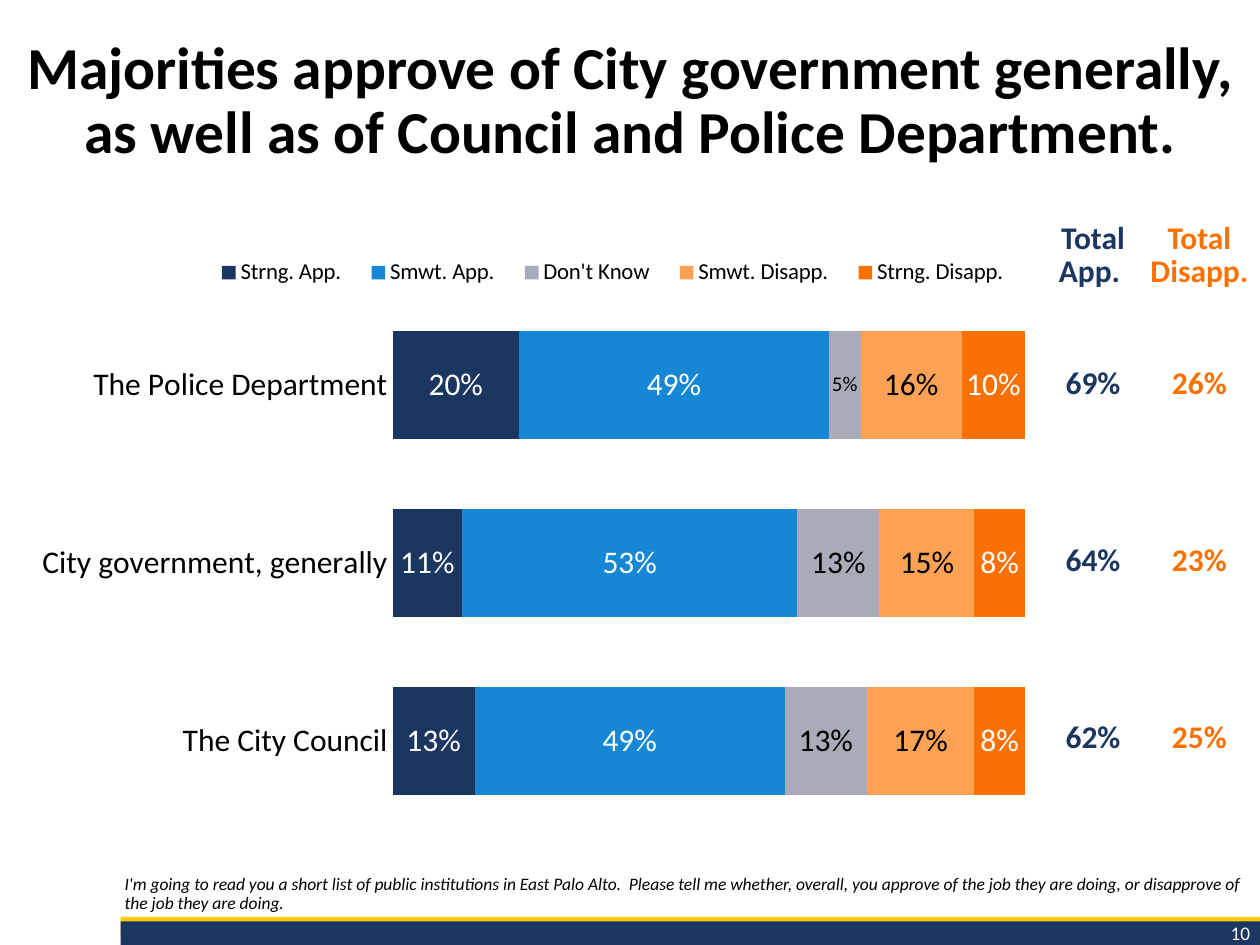
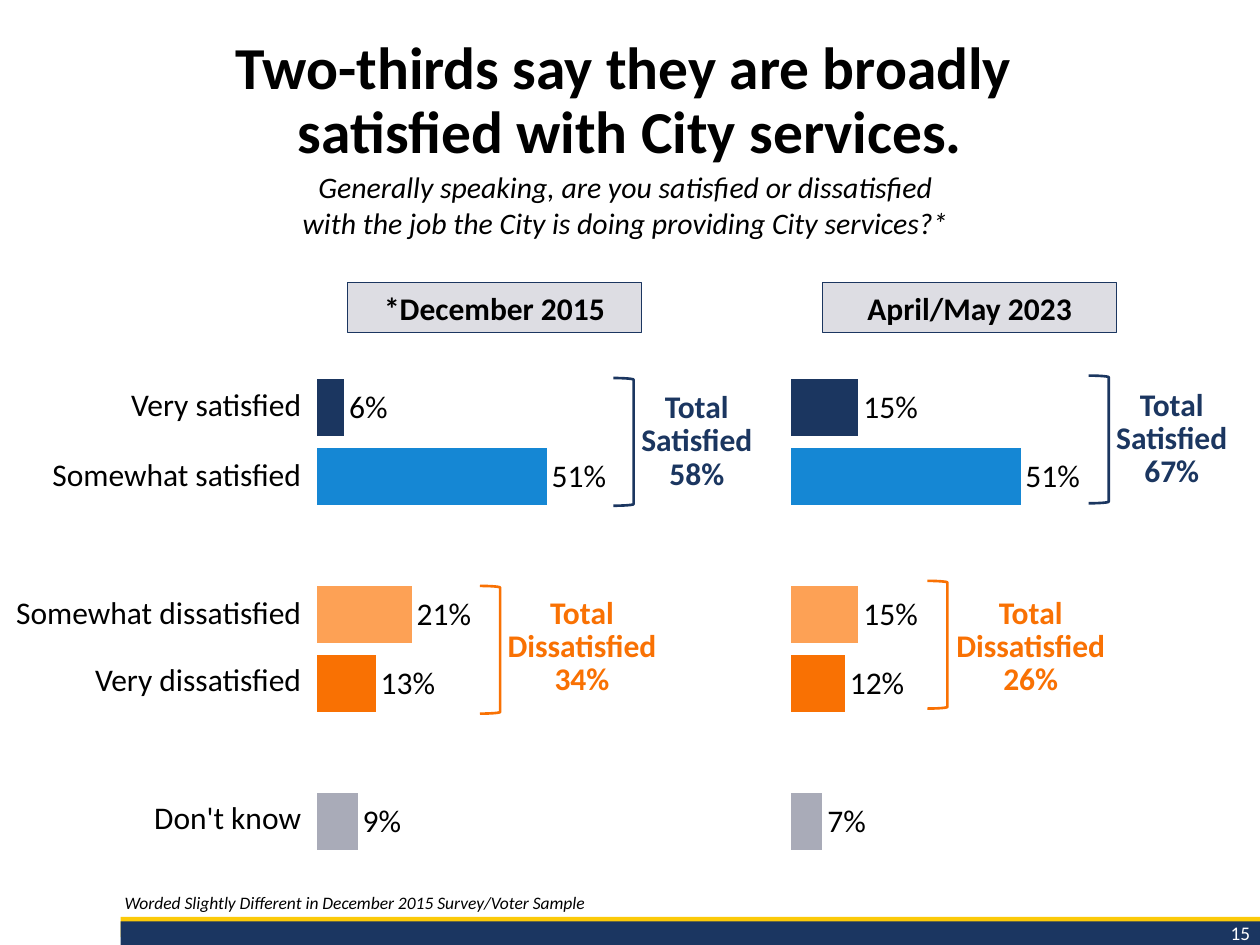
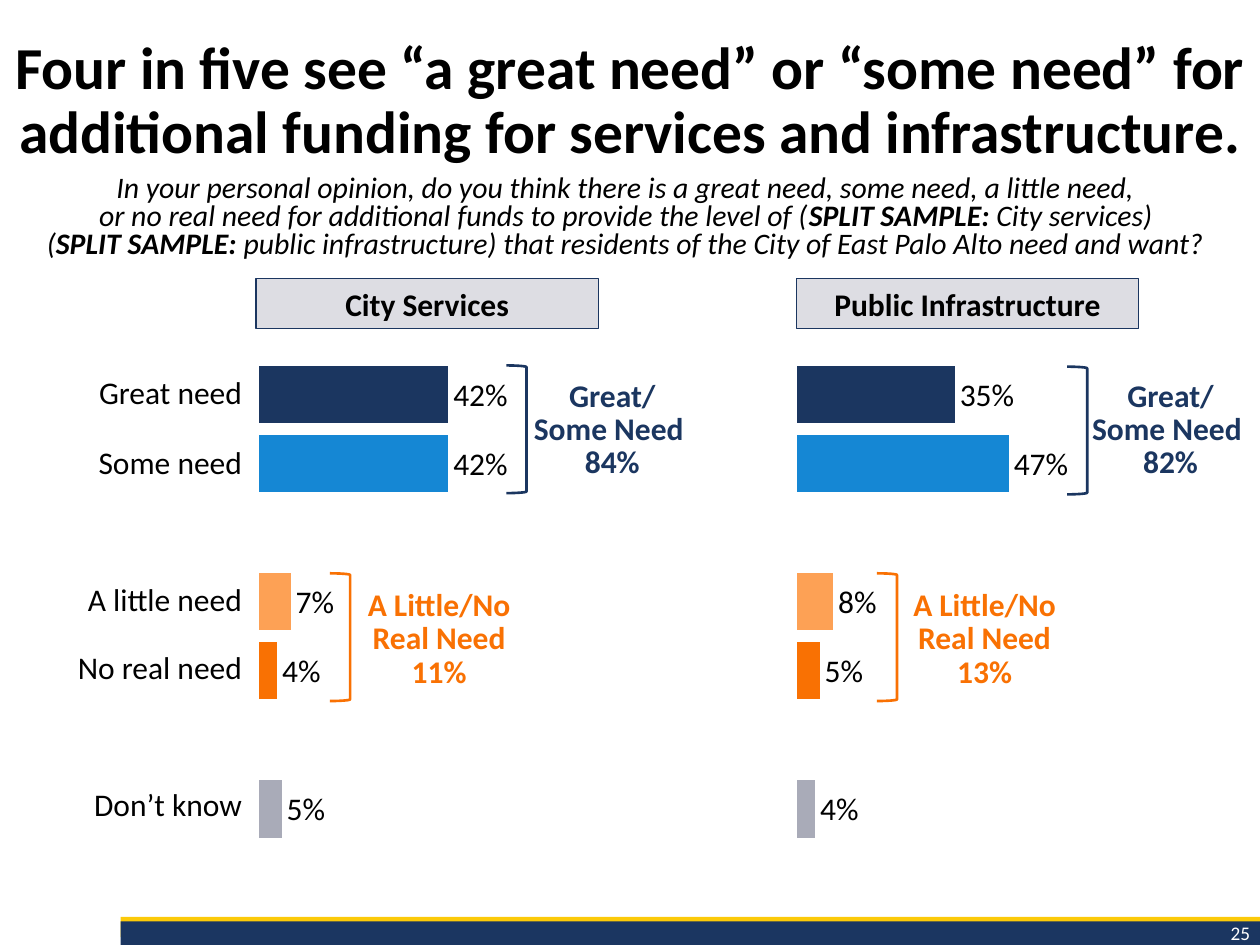
"""Build three survey slides with bar charts, brackets and totals."""
from pptx import Presentation
from pptx.chart.data import CategoryChartData
from pptx.dml.color import RGBColor
from pptx.enum.chart import (XL_CHART_TYPE, XL_LABEL_POSITION,
                             XL_LEGEND_POSITION, XL_TICK_LABEL_POSITION,
                             XL_TICK_MARK)
from pptx.enum.shapes import MSO_SHAPE
from pptx.enum.text import MSO_ANCHOR, MSO_AUTO_SIZE, PP_ALIGN
from pptx.oxml import parse_xml
from pptx.oxml.ns import nsdecls
from pptx.util import Pt

FONT = "Calibri"
BLACK = RGBColor(0x00, 0x00, 0x00)
WHITE = RGBColor(0xFF, 0xFF, 0xFF)
NAVY = RGBColor(0x1B, 0x36, 0x60)
BLUE = RGBColor(0x15, 0x87, 0xD4)
GRAY = RGBColor(0xA9, 0xAB, 0xB8)
PEACH = RGBColor(0xFD, 0xA1, 0x55)
ORANGE = RGBColor(0xF9, 0x71, 0x03)
GOLD = RGBColor(0xFC, 0xCA, 0x09)
PALE = RGBColor(0xDD, 0xDD, 0xE3)
BAND = RGBColor(0x1B, 0x36, 0x61)


def write(frame, text, size, ink=BLACK, bold=False, slant=False,
          side=PP_ALIGN.CENTER, pitch=None):
    """Fill a frame; text between bars is bold."""
    frame.word_wrap = True
    para = frame.paragraphs[0]
    para.alignment = side
    para.space_before = Pt(0)
    if pitch:
        para.line_spacing = pitch
    for row, line in enumerate(text.split("\n")):
        if row:
            para.add_line_break()
        for col, part in enumerate(line.split("|")):
            run = para.add_run()
            run.text = part
            font = run.font
            font.name, font.size = FONT, Pt(size)
            font.bold, font.italic = bold or col % 2 == 1, slant
            font.color.rgb = ink


def draw(slide, kind, cats, series, box, inner, top, step, gap):
    """Add a bar chart with a fixed plot area and no value axis."""
    data = CategoryChartData(number_format="0%")
    data.categories = cats
    for name, vals in series:
        data.add_series(name, vals)
    chart = slide.shapes.add_chart(kind, *map(Pt, box), data).chart
    chart.has_title = chart.has_legend = False
    chart.font.name, chart.font.size = FONT, Pt(18)
    chart.font.color.rgb = BLACK
    axis = chart.category_axis
    axis.reverse_order = True
    axis.major_tick_mark = axis.minor_tick_mark = XL_TICK_MARK.NONE
    axis.has_major_gridlines = False
    axis.format.line.fill.background()
    scale = chart.value_axis
    scale.visible = scale.has_major_gridlines = False
    scale.minimum_scale, scale.maximum_scale = 0, top
    scale.major_unit = step
    plot = chart.plots[0]
    plot.gap_width, plot.vary_by_categories = gap, False
    spots = "".join(f'<c:{tag} val="{val}"/>' for tag, val in zip("xywh", inner))
    area = chart.element.xpath("c:chart/c:plotArea")[0]
    area.insert(0, parse_xml(
        f'<c:layout {nsdecls("c")}><c:manualLayout><c:layoutTarget val="inner"/>'
        f'<c:xMode val="edge"/><c:yMode val="edge"/>{spots}'
        '</c:manualLayout></c:layout>'))
    return chart


deck = Presentation()
deck.slide_width, deck.slide_height = Pt(720), Pt(540)

pages = [
    ("Majorities approve of City government generally, as well as of Council "
     "and Police Department.", 10,
     "I'm going to read you a short list of public institutions in East Palo "
     "Alto.  Please tell me whether, overall, you approve of the job they are "
     "doing, or disapprove of the job they are doing."),
    ("Two-thirds say they are broadly \nsatisfied with City services.", 15,
     "Worded Slightly Different in December 2015 Survey/Voter Sample"),
    ("Four in five see “a great need” or “some need” for additional funding "
     "for services and infrastructure.", 25, None),
]
slides = []
for title, page, note in pages:
    slide = deck.slides.add_slide(deck.slide_layouts[1 if note else 5])
    slides.append(slide)
    for top, high, fill in ((524, 11.5, GOLD), (526.5, 13.5, BAND)):
        band = slide.shapes.add_shape(MSO_SHAPE.RECTANGLE, Pt(69), Pt(top),
                                      Pt(651), Pt(high))
        band.shadow.inherit = False
        band.fill.solid()
        band.fill.fore_color.rgb = fill
        band.line.fill.background()
    box = slide.shapes.add_textbox(Pt(615), Pt(522.7), Pt(106.5), Pt(21))
    write(box.text_frame, str(page), 11, WHITE, side=PP_ALIGN.RIGHT)
    head = slide.shapes.title
    head.left, head.top, head.width, head.height = Pt(0), Pt(14.4), Pt(720), Pt(88)
    head.text_frame.auto_size = MSO_AUTO_SIZE.NONE
    head.text_frame.vertical_anchor = MSO_ANCHOR.MIDDLE
    write(head.text_frame, title, 34, bold=True, pitch=0.9)
    if note:
        foot = slide.placeholders[1]
        foot.left, foot.top, foot.width, foot.height = (
            Pt(64), Pt(486.7), Pt(654.5), Pt(38.9))
        frame = foot.text_frame
        frame.auto_size = MSO_AUTO_SIZE.NONE
        frame.vertical_anchor = MSO_ANCHOR.BOTTOM
        props = frame.paragraphs[0]._p.get_or_add_pPr()
        props.set("marL", "0")
        props.set("indent", "0")
        props.append(parse_xml(f'<a:buNone {nsdecls("a")}/>'))
        write(frame, note, 10, slant=True, side=PP_ALIGN.LEFT, pitch=0.9)

votes = [
    ("Strng. App.", (0.20, 0.11, 0.13), NAVY, WHITE),
    ("Smwt. App.", (0.49, 0.53, 0.49), BLUE, WHITE),
    ("Don't Know", (0.05, 0.13, 0.13), GRAY, BLACK),
    ("Smwt. Disapp.", (0.16, 0.15, 0.17), PEACH, BLACK),
    ("Strng. Disapp.", (0.10, 0.08, 0.08), ORANGE, WHITE),
]
chart = draw(slides[0], XL_CHART_TYPE.BAR_STACKED_100,
             ["The Police Department", "City government, generally",
              "The City Council"],
             [vote[:2] for vote in votes], (0, 140.4, 598.3, 357.8),
             (0.375, 0.08, 0.604, 0.853), 1, 0.2, 65)
for bar, (name, vals, fill, ink) in zip(chart.plots[0].series, votes):
    bar.format.fill.solid()
    bar.format.fill.fore_color.rgb = fill
    tags = bar.data_labels
    tags.show_value, tags.position = True, XL_LABEL_POSITION.CENTER
    tags.font.size, tags.font.color.rgb = Pt(18), ink
    if name == "Don't Know":
        tag = bar.points[0].data_label
        tag.font.size, tag.position = Pt(12), XL_LABEL_POSITION.CENTER
chart.has_legend = True
chart.legend.position = XL_LEGEND_POSITION.TOP
chart.legend.include_in_layout = False
chart.legend.font.size = Pt(13)
chart.element.xpath("c:chart/c:legend/c:legendPos")[0].addnext(parse_xml(
    f'<c:layout {nsdecls("c")}><c:manualLayout><c:xMode val="edge"/>'
    '<c:yMode val="edge"/><c:x val="0.19"/><c:y val="0.015"/>'
    '<c:w val="0.79"/><c:h val="0.056"/></c:manualLayout></c:layout>'))

asks = [
    (slides[1], "Generally speaking, are you satisfied or dissatisfied \nwith the "
     "job the City is doing providing City services?* ", 92.9, None),
    (slides[2], "In your personal opinion, do you think there is a great need, "
     "some need, a little need, \nor no real need for additional funds to provide "
     "the level of (|SPLIT SAMPLE:| City services) \n(|SPLIT SAMPLE:| public "
     "infrastructure) that residents of the City of East Palo Alto need and "
     "want? ", 97.2, Pt(16)),
]
for slide, text, top, pitch in asks:
    box = slide.shapes.add_textbox(Pt(0), Pt(top), Pt(719), Pt(52))
    write(box.text_frame, text, 17, slant=True, pitch=pitch)

happy, upset = "Total Satisfied\n", "Total Dissatisfied\n"
great, small = "Great/\nSome Need \n", "A Little/No Real Need\n"
panels = [
    (slides[1], "*December 2015", (198.7, 161.3, 167.8), (165.6, 207.4),
     (0.06, 0.51, None, 0.21, 0.13, None, 0.09),
     [(350.6, 216, happy + "58%", 351.4, 220.3, 93.6, NAVY),
      (274.3, 334.8, upset + "34%", 275, 337.7, 115.2, ORANGE)]),
    (slides[1], "April/May 2023", (470.2, 161.3, 167.8), (436.3, 207.4),
     (0.15, 0.51, None, 0.15, 0.12, None, 0.07),
     [(622.1, 214.6, happy + "67%", 622.8, 218.9, 93.6, NAVY),
      (529.9, 331.9, upset + "26%", 531.4, 337.7, 115.2, ORANGE)]),
    (slides[2], "City Services", (146.2, 159.1, 195.8), (132.5, 200.2),
     (0.42, 0.42, None, 0.07, 0.04, None, 0.05),
     [(289.4, 208.8, great + "84%", 295.9, 213.8, 108, NAVY),
      (188.6, 327.6, small + "11%", 197.3, 333.4, 107.3, ORANGE)]),
    (slides[2], "Public Infrastructure", (455, 159.1, 195.8), (439.9, 200.2),
     (0.35, 0.47, None, 0.08, 0.05, None, 0.04),
     [(609.8, 209.5, great + "82%", 614.9, 213.8, 108, NAVY),
      (501.1, 327.6, small + "13%", 509, 333.4, 107.3, ORANGE)]),
]
for slide, name, place, spot, vals, sums in panels:
    chart = draw(slide, XL_CHART_TYPE.BAR_CLUSTERED, list("1234567"),
                 [("Series 1", vals)], (*spot, 223.2, 303.1),
                 (0.07, 0.019, 0.865, 0.911), 0.75, 0.15, 21)
    chart.category_axis.tick_label_position = XL_TICK_LABEL_POSITION.NONE
    bar = chart.plots[0].series[0]
    bar.format.fill.solid()
    bar.format.fill.fore_color.rgb = BLUE
    for spot, fill in ((0, NAVY), (3, PEACH), (4, ORANGE), (6, GRAY)):
        point = bar.points[spot].format.fill
        point.solid()
        point.fore_color.rgb = fill
    tags = bar.data_labels
    tags.show_value, tags.position = True, XL_LABEL_POSITION.OUTSIDE_END
    tags.font.size, tags.font.color.rgb = Pt(18), BLACK

    head = slide.shapes.add_shape(MSO_SHAPE.RECTANGLE, *map(Pt, place), Pt(28.8))
    head.shadow.inherit = False
    head.fill.solid()
    head.fill.fore_color.rgb = PALE
    head.line.color.rgb, head.line.width = NAVY, Pt(0.75)
    write(head.text_frame, name, 18, bold=True)

    for left, top, text, start, high, wide, ink in sums:
        brace = slide.shapes.add_shape(MSO_SHAPE.RIGHT_BRACKET, Pt(left), Pt(top),
                                       Pt(11.5), Pt(73))
        brace.shadow.inherit = False
        brace.fill.background()
        brace.line.color.rgb, brace.line.width = ink, Pt(1.5)
        box = slide.shapes.add_textbox(Pt(start), Pt(high), Pt(wide), Pt(64.8))
        write(box.text_frame, text, 18, ink, bold=True, pitch=Pt(19))

steps = (22.3, 40.3, 36.7, 42, 38.5, 36.7, 42)
grids = [
    (slides[0], (596.9, 127.4), (55.4, 66.2), (38.9, 64.1, 100.8, 101.5),
     [("Total App. ", "Total Disapp."), ("69%", "26%"), ("64%", "23%"),
      ("62%", "25%")], (NAVY, ORANGE), True, PP_ALIGN.CENTER),
    (slides[1], (5, 220.3), (167.8,), steps,
     [("Very satisfied",), ("Somewhat satisfied",), (), ("Somewhat dissatisfied",),
      ("Very dissatisfied",), (), ("Don't know",)],
     (BLACK,), False, PP_ALIGN.RIGHT),
    (slides[2], (3.6, 213.1), (135.4,), steps,
     [("Great need",), ("Some need",), (), ("A little need",),
      ("No real need",), (), ("Don’t know",)],
     (BLACK,), False, PP_ALIGN.RIGHT),
]
for slide, spot, wides, highs, rows, inks, bold, side in grids:
    table = slide.shapes.add_table(len(highs), len(wides), *map(Pt, spot),
                                   Pt(sum(wides)), Pt(sum(highs))).table
    table.first_row = table.horz_banding = False
    for col, wide in zip(table.columns, wides):
        col.width = Pt(wide)
    for row, high in zip(table.rows, highs):
        row.height = Pt(high)
    for cell in table.iter_cells():
        cell.fill.background()
        cell.vertical_anchor = MSO_ANCHOR.BOTTOM
        cell.margin_left = cell.margin_right = cell.margin_top = Pt(0.7)
        cell.margin_bottom = Pt(0)
    for num, row in enumerate(rows):
        pitch = Pt(19) if bold and num == 0 else None
        for col, text in enumerate(row):
            write(table.cell(num, col).text_frame, text, 18, inks[col], bold,
                  side=side, pitch=pitch)

deck.save("out.pptx")
